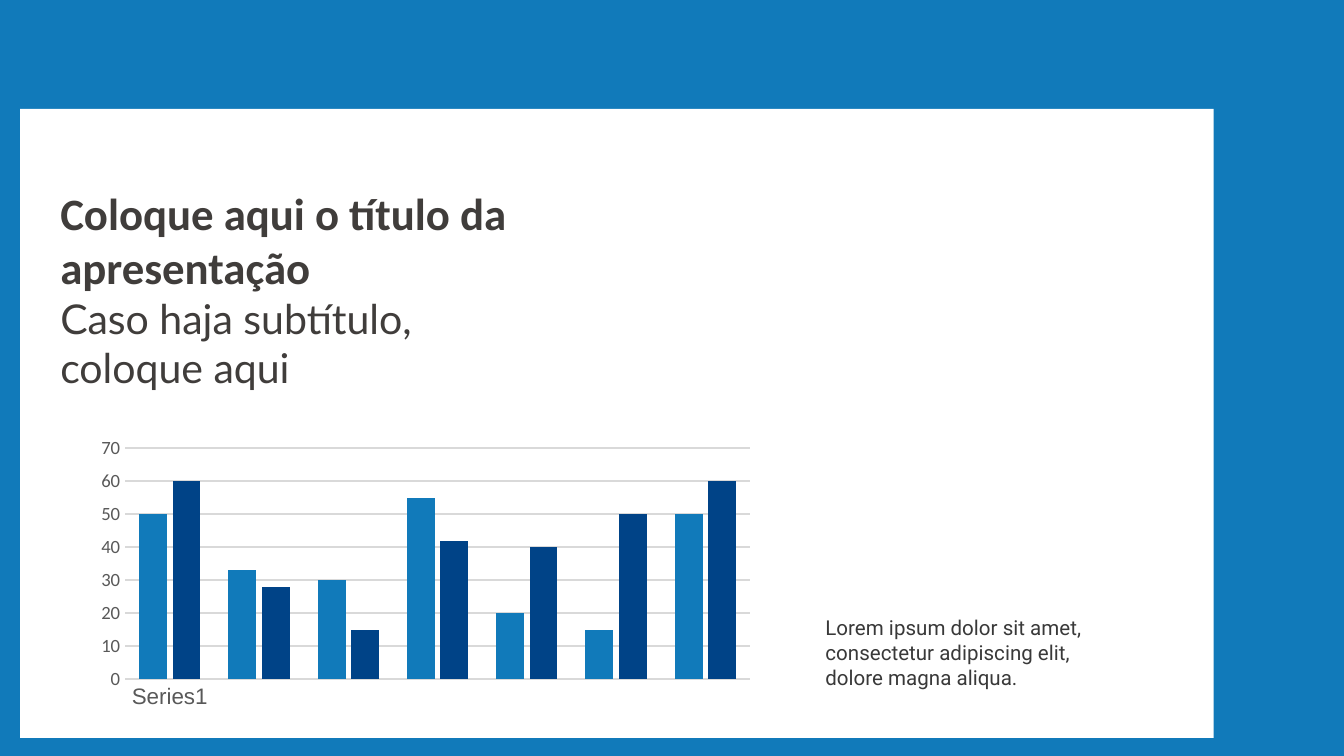
from dataclasses import dataclass

from lxml import etree
from pptx import Presentation
from pptx.chart.data import CategoryChartData
from pptx.dml.color import RGBColor as RGB
from pptx.enum.chart import XL_CHART_TYPE as ChartType, XL_TICK_MARK as Tick
from pptx.enum.shapes import MSO_SHAPE as Shape
from pptx.oxml.ns import qn
from pptx.util import Cm, Pt


@dataclass(frozen=True)
class Theme:
    blue: str = "117ABA"
    navy: str = "004387"
    white: str = "FFFFFF"
    title: str = "403D3B"
    body: str = "393939"
    axis: str = "595959"
    grid: str = "D9D9D9"
    title_size: float = 24
    subtitle_size: float = 22
    body_size: float = 11
    category_size: float = 12
    value_size: float = 10


@dataclass(frozen=True)
class Box:
    left: float
    top: float
    width: float
    height: float

    def lengths(self) -> list:
        return [Cm(v) for v in (self.left, self.top, self.width, self.height)]


@dataclass(frozen=True)
class Line:
    text: str
    font: str
    size: float
    color: str
    bold: bool = False
    after: float = 0


@dataclass(frozen=True)
class Series:
    name: str
    values: tuple
    color: str


T = Theme()
PANELS = [(Box(0, 0, 25.4, 14.29), T.blue), (Box(0.38, 2.06, 22.56, 11.89), T.white)]
TEXTS = [
    (Box(15.6, 11.63, 5.28, 1.5), [
        Line("Lorem ipsum dolor sit amet, consectetur adipiscing elit, "
             "dolore magna aliqua.", "Roboto", T.body_size, T.body, after=8)]),
    (Box(1.14, 3.51, 8.69, 3.99), [
        Line("Coloque aqui o título da apresentação", "Calibri",
             T.title_size, T.title, bold=True),
        Line("Caso haja subtítulo, coloque aqui", "Lato", T.subtitle_size, T.title)]),
]
CHART_BOX = Box(1.73, 8.15, 12.7, 5.33)
PLOT_LAYOUT = {"x": 0.05, "y": 0.06, "w": 0.93, "h": 0.82}
CATEGORIES = ["Series1"] + [""] * 6
SERIES = [
    Series("Series 1", (50, 33, 30, 55, 20, 15, 50), T.blue),
    Series("Series 2", (60, 28, 15, 42, 40, 50, 60), T.navy),
]


def set_font(font, name: str, size: float, color: str, bold: bool = False) -> None:
    for key, value in {"name": name, "size": Pt(size), "bold": bold}.items():
        setattr(font, key, value)
    font.color.rgb = RGB.from_string(color)


def add_panel(s, box: Box, color: str) -> None:
    sp = s.shapes.add_shape(Shape.RECTANGLE, *box.lengths())
    sp.shadow.inherit = False
    sp.fill.solid()
    sp.fill.fore_color.rgb = RGB.from_string(color)
    sp.line.fill.background()


def add_text(s, box: Box, lines: list[Line]) -> None:
    tf = s.shapes.add_textbox(*box.lengths()).text_frame
    tf.word_wrap = True
    for side in ("left", "top", "right", "bottom"):
        setattr(tf, f"margin_{side}", 0)
    for i, line in enumerate(lines):
        p = tf.add_paragraph() if i else tf.paragraphs[0]
        p.space_after = Pt(line.after)
        r = p.add_run()
        r.text = line.text
        set_font(r.font, line.font, line.size, line.color, line.bold)


def set_plot_layout(chart) -> None:
    """Fix the inner plot area as fractions of the chart frame."""
    area = chart.plots[0]._element.getparent()
    for old in area.findall(qn("c:layout")):
        area.remove(old)
    layout = etree.Element(qn("c:layout"))
    area.insert(0, layout)
    manual = etree.SubElement(layout, qn("c:manualLayout"))
    settings = {"layoutTarget": "inner", "xMode": "edge", "yMode": "edge", **PLOT_LAYOUT}
    for tag, value in settings.items():
        etree.SubElement(manual, qn(f"c:{tag}")).set("val", str(value))


def add_column_chart(s, box: Box, series: list[Series]) -> None:
    data = CategoryChartData()
    data.categories = CATEGORIES
    for item in series:
        data.add_series(item.name, item.values)
    chart = s.shapes.add_chart(ChartType.COLUMN_CLUSTERED, *box.lengths(), data).chart
    chart.has_title = chart.has_legend = False
    set_font(chart.font, "Arial", T.value_size, "000000")

    # Columns
    plot = chart.plots[0]
    for key, value in {"gap_width": 100, "overlap": -20, "vary_by_categories": False}.items():
        setattr(plot, key, value)
    for drawn, item in zip(plot.series, series):
        drawn.format.fill.solid()
        drawn.format.fill.fore_color.rgb = RGB.from_string(item.color)

    # Axes
    for axis, font, size in ((chart.category_axis, "Arial", T.category_size),
                             (chart.value_axis, "Calibri", T.value_size)):
        axis.major_tick_mark = axis.minor_tick_mark = Tick.NONE
        axis.format.line.fill.background()
        set_font(axis.tick_labels.font, font, size, T.axis)
    values = chart.value_axis
    for key, value in {"minimum_scale": 0, "maximum_scale": 70, "major_unit": 10}.items():
        setattr(values, key, value)
    grid = values.major_gridlines.format.line
    grid.width = Pt(0.75)
    grid.color.rgb = RGB.from_string(T.grid)
    set_plot_layout(chart)


def main() -> None:
    prs = Presentation()
    prs.slide_width, prs.slide_height = Cm(25.4), Cm(14.29)
    s = prs.slides.add_slide(prs.slide_layouts[6])

    # Blue frame and white panel
    for box, color in PANELS:
        add_panel(s, box, color)

    # Chart, then note and title
    add_column_chart(s, CHART_BOX, SERIES)
    for box, lines in TEXTS:
        add_text(s, box, lines)
    prs.save("out.pptx")


if __name__ == "__main__":
    main()
